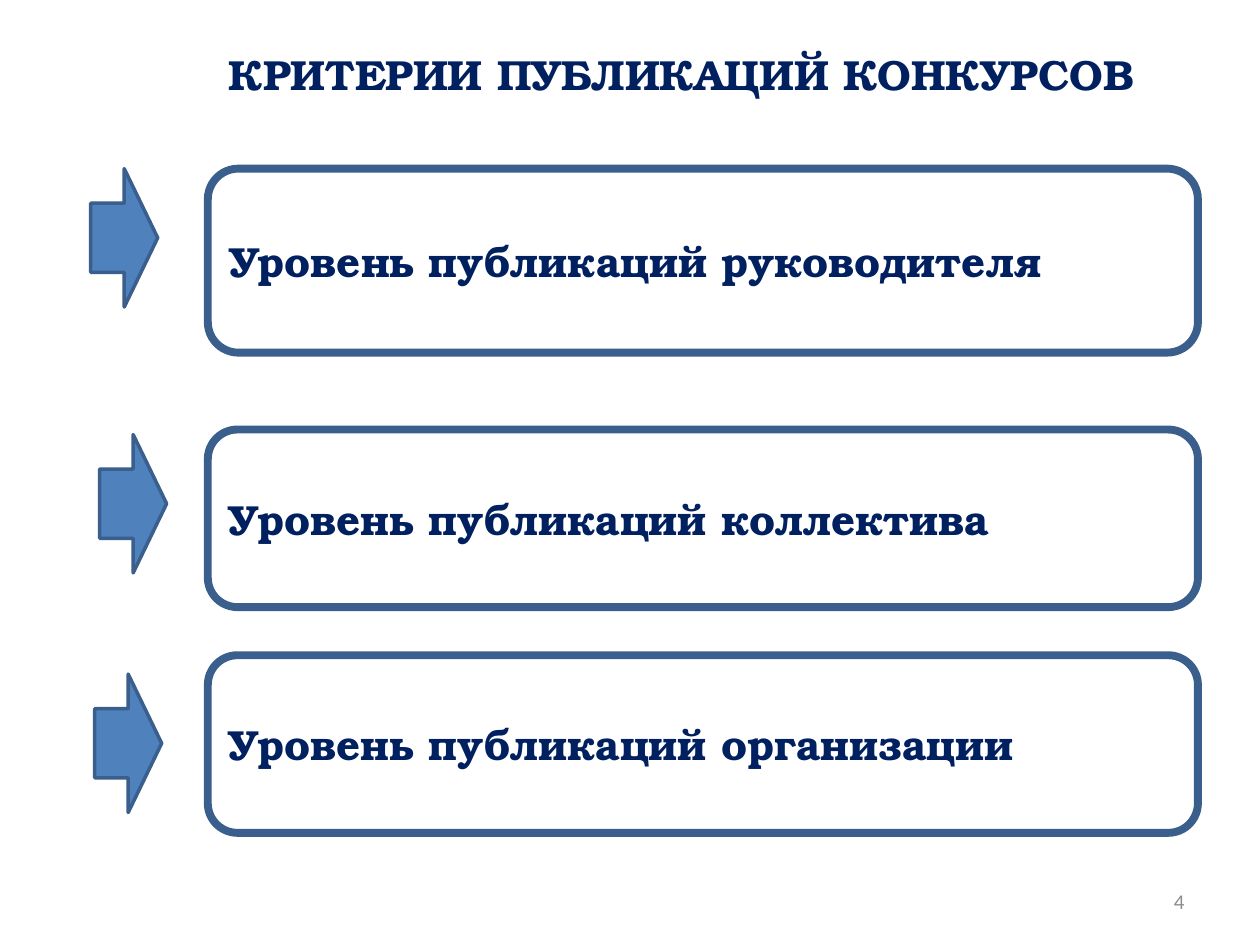
"""Build the slide that lists the publication criteria of the competitions."""
import pptx
import pptx.dml.color
import pptx.enum.shapes
import pptx.enum.text
import pptx.util

Cm = pptx.util.Cm
Pt = pptx.util.Pt
NAVY = pptx.dml.color.RGBColor(0x00, 0x20, 0x60)
BLUE = pptx.dml.color.RGBColor(0x4F, 0x81, 0xBD)
STEEL = pptx.dml.color.RGBColor(0x3A, 0x5F, 0x8C)
GREY = pptx.dml.color.RGBColor(0x8C, 0x8C, 0x8C)
WHITE = pptx.dml.color.RGBColor(0xFF, 0xFF, 0xFF)
SHAPES = pptx.enum.shapes.MSO_SHAPE
ALIGN = pptx.enum.text.PP_ALIGN
ANCHOR = pptx.enum.text.MSO_ANCHOR


def write(holder, text, align=ALIGN.LEFT, anchor=ANCHOR.MIDDLE,
          font="TeX Gyre Bonum", size=24, color=NAVY, bold=True):
    frame = holder.text_frame
    frame.word_wrap = True
    frame.auto_size = pptx.enum.text.MSO_AUTO_SIZE.NONE
    frame.vertical_anchor = anchor
    paragraph = frame.paragraphs[0]
    paragraph.alignment = align
    run = paragraph.add_run()
    run.text = text
    run.font.name = font
    run.font.size = Pt(size)
    run.font.bold = bold
    run.font.color.rgb = color


def draw(kind, left, top, width, height, fill, line_width):
    shape = slide.shapes.add_shape(kind, Cm(left), Cm(top), Cm(width), Cm(height))
    shape.shadow.inherit = False
    shape.fill.solid()
    shape.fill.fore_color.rgb = fill
    shape.line.color.rgb = STEEL
    shape.line.width = Pt(line_width)
    return shape


deck = pptx.Presentation()
deck.slide_width = Cm(25.4)
deck.slide_height = Cm(19.05)
slide = deck.slides.add_slide(deck.slide_layouts[5])

heading = slide.shapes.title
heading.left, heading.top = Cm(1.88), Cm(0.86)
heading.width, heading.height = Cm(23.7), Cm(1.75)
write(heading, "КРИТЕРИИ ПУБЛИКАЦИЙ КОНКУРСОВ", align=ALIGN.CENTER, anchor=ANCHOR.TOP)

criteria = [
    ("Уровень публикаций руководителя", 3.4, 3.71, 1.83, 3.4),
    ("Уровень публикаций коллектива", 8.66, 3.58, 2.01, 8.76),
    ("Уровень публикаций организации", 13.21, 3.58, 1.91, 13.59),
]
for criterion, top, height, arrow_left, arrow_top in criteria:
    draw(SHAPES.RIGHT_ARROW, arrow_left, arrow_top, 1.35, 2.79, BLUE, 2)
    card = draw(SHAPES.ROUNDED_RECTANGLE, 4.19, top, 19.96, height, WHITE, 4.5)
    write(card, criterion)

page_number = slide.shapes.add_textbox(Cm(18.21), Cm(17.65), Cm(5.92), Cm(1.02))
write(page_number, "4", align=ALIGN.RIGHT, font="Calibri", size=12, color=GREY, bold=False)

deck.save("out.pptx")
